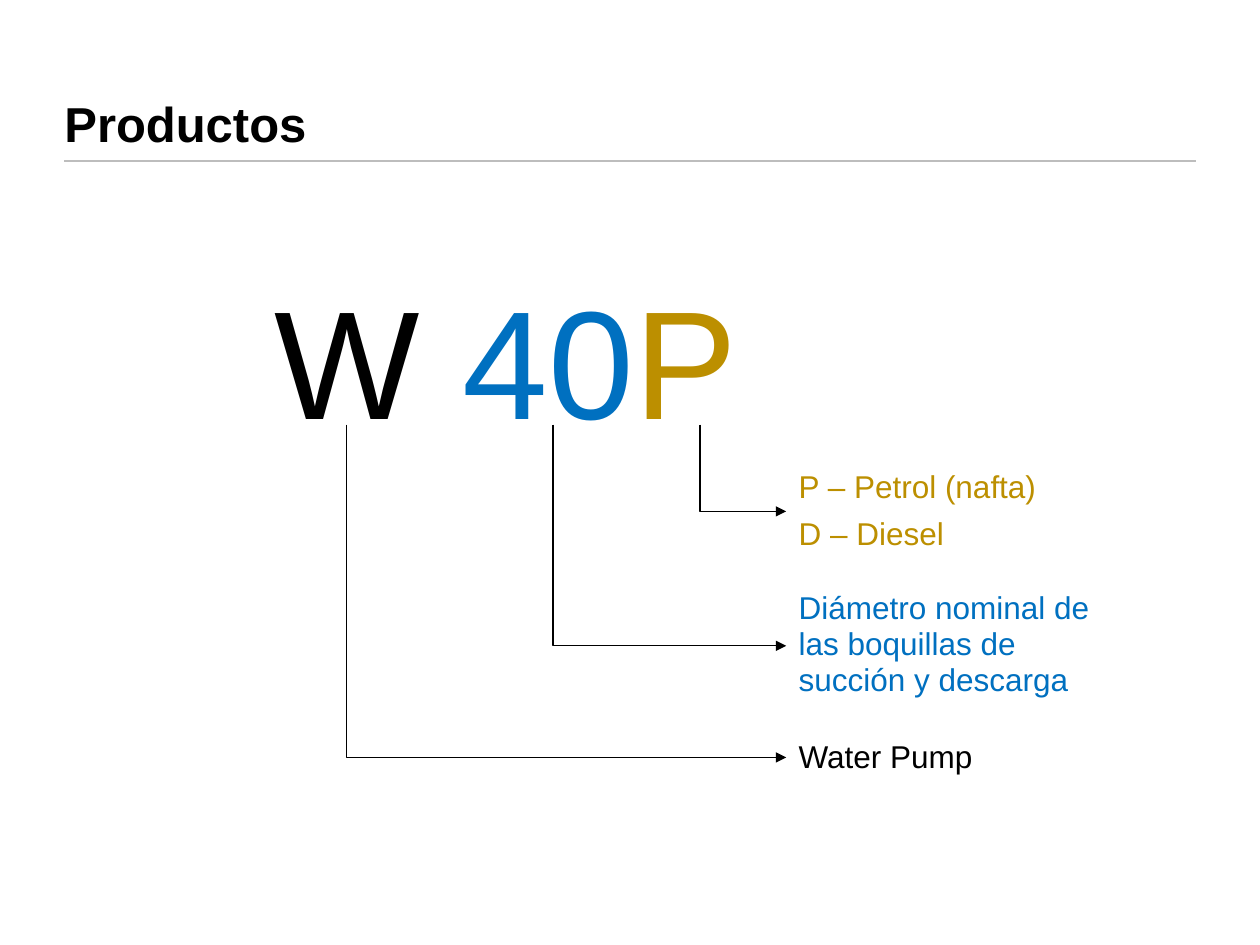
import pptx
import pptx.dml.color
import pptx.enum.shapes
import pptx.enum.text
import pptx.oxml.ns
import pptx.util
from lxml import etree

Cm = pptx.util.Cm
Pt = pptx.util.Pt
qn = pptx.oxml.ns.qn
ALIGN = pptx.enum.text.PP_ALIGN
ANCHOR = pptx.enum.text.MSO_ANCHOR
CONNECTOR = pptx.enum.shapes.MSO_CONNECTOR

COLORS = {"black": "000000", "blue": "0070C0", "gold": "BC8F00", "rule": "BDBDBD"}
LABEL_LEFT = 15.85
LABEL_WIDTH = 6.58
CODE_BOTTOM = 8.56


def rgb(name):
    """Return the named colour."""
    return pptx.dml.color.RGBColor.from_string(COLORS[name])


def format_run(r, size, color, bold=False):
    """Set the font of a run."""
    r.font.name = "Arial"
    r.font.size = Pt(size)
    r.font.bold = bold
    r.font.color.rgb = rgb(color)


def add_box(slide, left, top, width, height):
    """Add a wrapping text box and return its text frame."""
    tf = slide.shapes.add_textbox(Cm(left), Cm(top), Cm(width), Cm(height)).text_frame
    tf.word_wrap = True
    return tf


def add_title(slide, text):
    """Add the slide title and the rule below it."""
    tf = add_box(slide, 1.3, -0.1, 20.42, 3.18)
    tf.margin_left = tf.margin_right = tf.margin_top = tf.margin_bottom = 0
    tf.vertical_anchor = ANCHOR.BOTTOM
    tf.text = text
    format_run(tf.paragraphs[0].runs[0], 28, "black", bold=True)
    add_line(slide, CONNECTOR.STRAIGHT, (1.3, 3.25), (24.1, 3.25), "rule", 1)


def add_code(slide, parts):
    """Add the large product code, one coloured run per part."""
    p = add_box(slide, 2.79, 5.51, 14.81, 3.84).paragraphs[0]
    p.alignment = ALIGN.CENTER
    p.line_spacing = 0.95
    for text, color in parts:
        r = p.add_run()
        r.text = text
        format_run(r, 88, color)


def add_label(slide, top, height, lines, color):
    """Add the explanation of one part of the code."""
    tf = add_box(slide, LABEL_LEFT, top, LABEL_WIDTH, height)
    tf.text = "\n".join(lines)
    for i, p in enumerate(tf.paragraphs):
        p.line_spacing = 0.95
        p.space_before = Pt(6 if i else 0)
        format_run(p.runs[0], 18, color)


def add_line(slide, kind, start, end, color, width):
    """Add a connector without shadow."""
    sp = slide.shapes.add_connector(kind, *map(Cm, start + end))
    sp.line.color.rgb = rgb(color)
    sp.line.width = Pt(width)
    etree.SubElement(sp._element.spPr, qn("a:effectLst"))
    return sp


def add_elbow_arrow(slide, x, y):
    """Add an arrow that goes down from the code and then right to a label."""
    sp = add_line(slide, CONNECTOR.ELBOW, (x, CODE_BOTTOM), (LABEL_LEFT, y), "black", 0.75)
    guides = sp._element.spPr.find(qn("a:prstGeom")).get_or_add_avLst()
    etree.SubElement(guides, qn("a:gd"), name="adj1", fmla="val 0")
    etree.SubElement(sp.line._get_or_add_ln(), qn("a:tailEnd"), type="triangle")


def main():
    """Build the product code slide."""
    prs = pptx.Presentation()
    prs.slide_width, prs.slide_height = Cm(25.4), Cm(19.05)
    slide = prs.slides.add_slide(prs.slide_layouts[6])
    add_title(slide, "Productos")
    add_code(slide, [("W ", "black"), ("40", "blue"), ("P", "gold")])
    labels = [
        (9.35, 1.93, ["P – Petrol (nafta)", "D – Diesel"], "gold"),
        (11.79, 2.44, ["Diámetro nominal de las boquillas de succión y descarga"], "blue"),
        (14.78, 0.99, ["Water Pump"], "black"),
    ]
    for label in labels:
        add_label(slide, *label)
    for x, y in [(14.11, 10.31), (11.15, 13.02), (6.98, 15.27)]:
        add_elbow_arrow(slide, x, y)
    prs.save("out.pptx")


if __name__ == "__main__":
    main()
